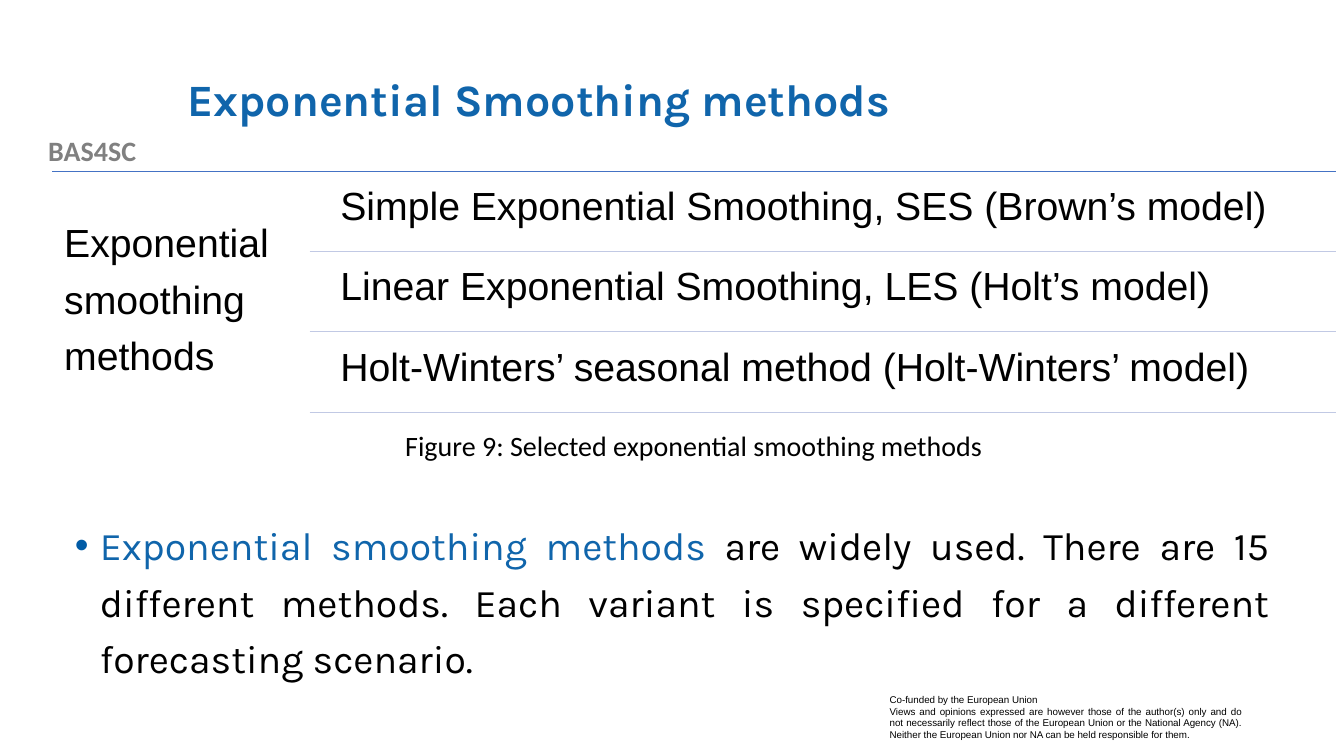
from pptx import Presentation
from pptx.util import Cm, Pt
from pptx.dml.color import RGBColor
from pptx.enum.shapes import MSO_CONNECTOR as Link
from pptx.enum.text import MSO_ANCHOR as Anchor, MSO_AUTO_SIZE as Fit, PP_ALIGN as Align
from pptx.oxml.ns import qn
from lxml.etree import SubElement

# Content
TITLE = "Exponential Smoothing methods"
PROJECT = "BAS4SC"
GROUP = "Exponential smoothing methods"
METHODS = [
    "Simple Exponential Smoothing, SES (Brown’s model)",
    "Linear Exponential Smoothing, LES (Holt’s model)",
    "Holt-Winters’ seasonal method (Holt-Winters’ model)",
]
CAPTION = "Figure 9: Selected exponential smoothing methods"
BULLET = [
    "Exponential smoothing methods ",
    "are widely used. There are 15 different methods. Each variant is "
    "specified for a different forecasting scenario.",
]
FUNDING = [
    "Co-funded by the European Union",
    "Views and opinions expressed are however those of the author(s) only and "
    "do not necessarily reflect those of the European Union or the National "
    "Agency (NA). Neither the European Union nor NA can be held responsible "
    "for them.",
]

BLACK = RGBColor(0, 0, 0)
WHITE = RGBColor(0xFF, 0xFF, 0xFF)
GREY = RGBColor(0x80, 0x80, 0x80)
BLUE = RGBColor(0x10, 0x65, 0xAB)
DOT = RGBColor(0x01, 0x5B, 0xA6)
RULE = RGBColor(0x44, 0x72, 0xC4)
PALE = RGBColor(0xC1, 0xC9, 0xE4)

# Method list geometry, in cm
LEFT, RIGHT, TOP = 1.32, 33.68, 4.32
SPLIT, INDENT = 7.8, 0.48
STEP, HIGH = 2.03, 1.93


def place(shape, left, top, width, height):
    shape.left, shape.top = Cm(left), Cm(top)
    shape.width, shape.height = Cm(width), Cm(height)


def style(run, size, face, color, bold=False):
    font = run.font
    font.size, font.name, font.bold = Pt(size), face, bold
    font.color.rgb = color


def write(frame, lines, size, face, color, bold=False, align=Align.LEFT, space=1.0):
    frame.word_wrap = True
    frame.auto_size = Fit.NONE
    frame.text = "\n".join(lines)
    for para in frame.paragraphs:
        para.alignment = align
        para.line_spacing = space
        style(para.runs[0], size, face, color, bold)


def label(slide, box, text, *look, inset=None, **more):
    frame = slide.shapes.add_textbox(*map(Cm, box)).text_frame
    write(frame, [text], *look, **more)
    if inset:
        frame.margin_left = frame.margin_right = Cm(inset)
        frame.margin_top = frame.margin_bottom = Cm(inset)
    return frame


def rule(slide, left, y, color):
    line = slide.shapes.add_connector(Link.STRAIGHT, Cm(left), Cm(y), Cm(RIGHT), Cm(y))
    line.line.color.rgb = color
    line.line.width = Pt(1)
    SubElement(line._element.spPr, qn("a:effectLst"))


def main():
    deck = Presentation()
    deck.slide_width, deck.slide_height = Cm(33.87), Cm(19.05)
    slide = deck.slides.add_slide(deck.slide_layouts[1])
    title, body = slide.placeholders

    # Project name and funding note
    label(slide, (0, 3.25, 4.65, 1.12), PROJECT, 20, "Calibri", GREY, True,
          align=Align.CENTER)
    note = slide.shapes.add_textbox(Cm(22.17), Cm(17.35), Cm(9.37), Cm(1.45))
    note.fill.solid()
    note.fill.fore_color.rgb = WHITE
    write(note.text_frame, FUNDING, 7, "Arial", BLACK, align=Align.JUSTIFY)

    # Title
    place(title, 4.47, 1.02, 27.08, 3.1)
    write(title.text_frame, [TITLE], 32, "Karla", BLUE, True, space=0.9)
    title.text_frame.vertical_anchor = Anchor.MIDDLE

    # Bullet with a coloured opening
    place(body, 1.63, 12.78, 30.61, 4.57)
    write(body.text_frame, BULLET[:1], 28, "Karla", BLUE, align=Align.JUSTIFY, space=1.2)
    para = body.text_frame.paragraphs[0]
    para.space_before = Pt(0)
    rest = para.add_run()
    rest.text = BULLET[1]
    style(rest, 28, "Karla", BLACK)
    props = para._p.get_or_add_pPr()
    props.set("marL", str(Cm(0.635)))
    props.set("indent", str(-Cm(0.635)))
    SubElement(SubElement(props, qn("a:buClr")), qn("a:srgbClr"), val=str(DOT))
    SubElement(props, qn("a:buFont"), typeface="Arial")
    SubElement(props, qn("a:buChar"), char="•")

    # Method list
    rule(slide, LEFT, TOP, RULE)
    group = label(slide, (LEFT, TOP, SPLIT - LEFT, 6.17), GROUP, 28, "Arial", BLACK,
                  inset=0.3, space=1.2)
    group.vertical_anchor = Anchor.MIDDLE
    group.paragraphs[0].space_after = Pt(9.8)
    for i, method in enumerate(METHODS):
        top = TOP + 0.08 + i * STEP
        label(slide, (SPLIT + INDENT, top, 25.4, HIGH), method, 28, "Arial", BLACK,
              inset=0.3, space=0.9)
        rule(slide, SPLIT, top + HIGH, PALE)

    # Caption
    label(slide, (9.42, 10.67, 16.13, 1.12), CAPTION, 20, "Calibri", BLACK,
          align=Align.CENTER)

    deck.save("out.pptx")


if __name__ == "__main__":
    main()
